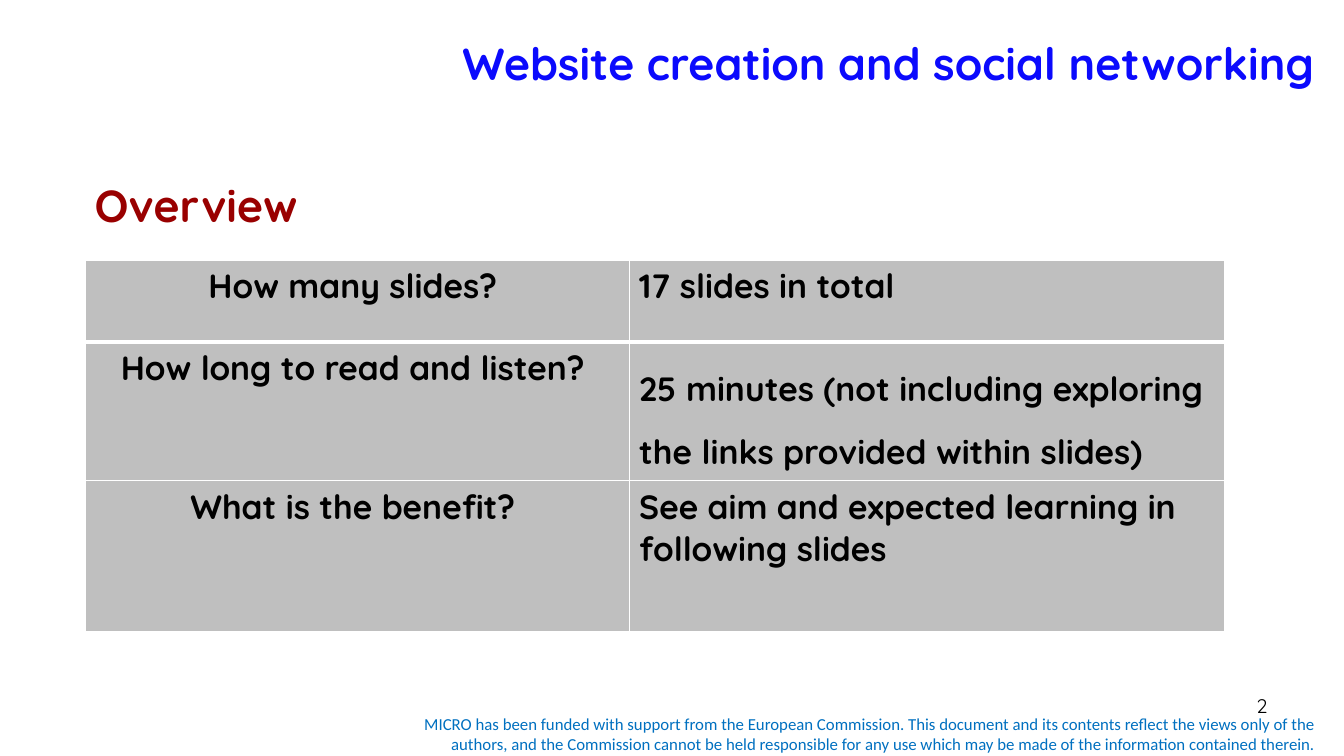
from pptx import Presentation
from pptx.dml.color import RGBColor as RGB
from pptx.enum.text import MSO_ANCHOR as Anchor, PP_ALIGN as Align
from pptx.oxml.ns import qn
from pptx.util import Inches, Pt
from lxml.etree import SubElement as Sub

COLORS = {
    "title": "0B0AFD",
    "head": "990000",
    "note": "0070C0",
    "ink": "000000",
    "cell": "BFBFBF",
    "rule": "FFFFFF",
}
ROWS = [
    ("How many slides? ", "17 slides in total"),
    ("How long to read and listen? ",
     "25 minutes (not including exploring the links provided within slides)"),
    ("What is the benefit? ", "See aim and expected learning in following slides"),
]
NOTE = (
    "MICRO has been funded with support from the European Commission. "
    "This document and its contents reflect the views only of the authors, "
    "and the Commission cannot be held responsible for any use which may be "
    "made of the information contained therein."
)


def write(frame, text, size=24, color="ink", bold=False, font="Quicksand",
          align=Align.LEFT, space=None):
    para = frame.paragraphs[0]
    para.alignment = align
    if space:
        para.line_spacing = space
    run = para.add_run()
    run.text = text
    run.font.name = font
    run.font.size = Pt(size)
    run.font.bold = bold
    run.font.color.rgb = RGB.from_string(COLORS[color])


def label(slide, box, text, anchor=Anchor.TOP, **style):
    frame = slide.shapes.add_textbox(*map(Inches, box)).text_frame
    frame.word_wrap = True
    frame.vertical_anchor = anchor
    write(frame, text, **style)


def edge(cell, base):
    props = cell._tc.get_or_add_tcPr()
    for spot, side in enumerate("LRTB"):
        width = base if side == "B" else 1
        line = props.makeelement(qn(f"a:ln{side}"), {"w": str(Pt(width))})
        fill = Sub(line, qn("a:solidFill"))
        Sub(fill, qn("a:srgbClr"), val=COLORS["rule"])
        props.insert(spot, line)


def facts(slide, box):
    table = slide.shapes.add_table(len(ROWS), 2, *map(Inches, box)).table
    for col, width in zip(table.columns, (5.39, 5.91)):
        col.width = Inches(width)
    for row, height in zip(table.rows, (0.81, 1.38, 1.5)):
        row.height = Inches(height)
    for r, texts in enumerate(ROWS):
        for c, text in enumerate(texts):
            cell = table.cell(r, c)
            cell.fill.solid()
            cell.fill.fore_color.rgb = RGB.from_string(COLORS["cell"])
            edge(cell, 3 if r == 0 else 1)
            write(cell.text_frame, text, bold=True,
                  align=Align.LEFT if c else Align.CENTER,
                  space=1.5 if (r, c) == (1, 1) else None)


def header(slide, box):
    left, top, width, height = box
    label(slide, (left + 1.14, top, width - 1.33, height), "Website creation and social networking",
          anchor=Anchor.MIDDLE, size=32, color="title", bold=True, align=Align.RIGHT)


def body(slide, box):
    left, top, width, height = box
    label(slide, (left, top, 2.9, 0.64), "Overview", size=32, color="head", bold=True)
    facts(slide, (left + 0.01, top + 0.87, width, height - 0.87))


def footer(slide, box):
    left, top, width, height = box
    label(slide, (left, top + 0.2, width, 0.5), NOTE, anchor=Anchor.MIDDLE,
          size=12, color="note", font="Calibri", align=Align.RIGHT)
    label(slide, (left + 5.81, top, 3.11, 0.52), "2", size=14, align=Align.RIGHT)


def main():
    deck = Presentation()
    deck.slide_width, deck.slide_height = Inches(13.33), Inches(7.5)
    slide = deck.slides.add_slide(deck.slide_layouts[6])
    header(slide, (0, 0, 13.33, 1.25))
    body(slide, (0.84, 1.71, 11.3, 4.56))
    footer(slide, (3.75, 6.83, 9.4, 0.7))
    deck.save("out.pptx")


if __name__ == "__main__":
    main()
